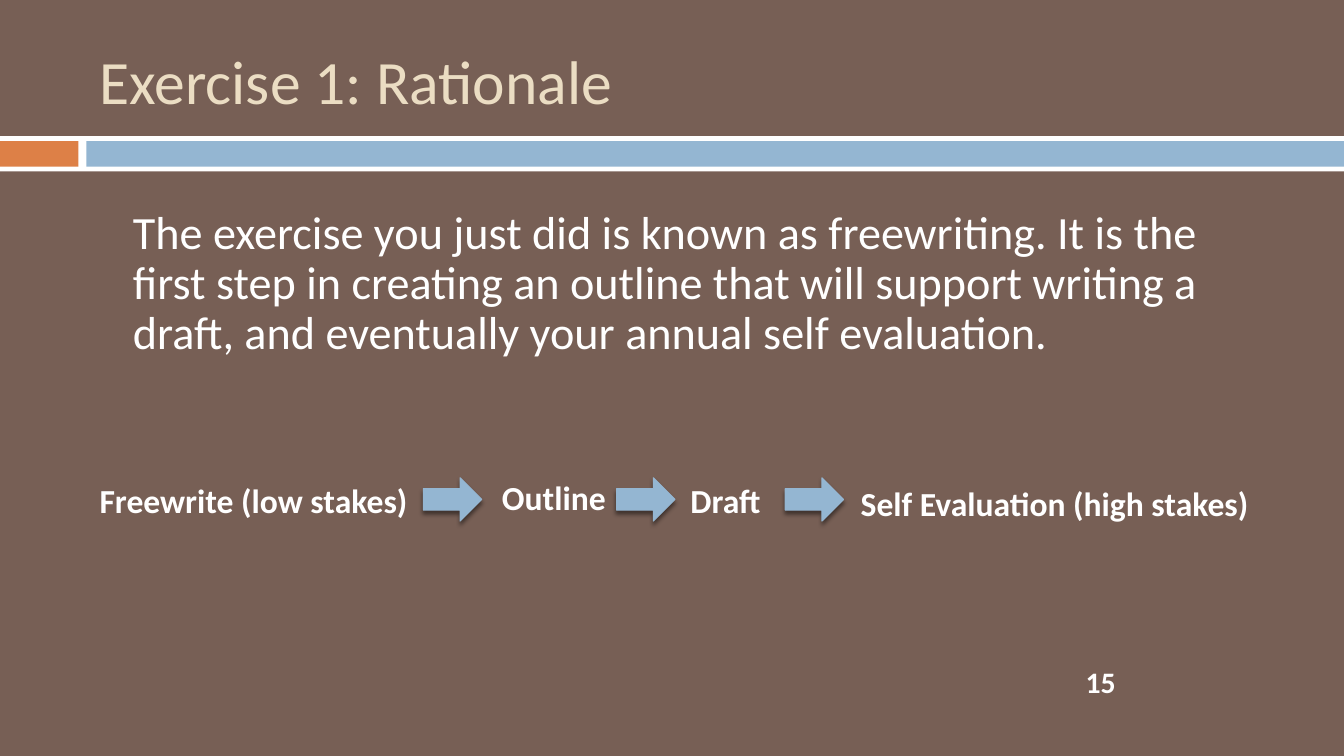
from lxml import etree
from pptx import Presentation
from pptx import util as u
from pptx.dml import color
from pptx.enum import shapes, text
from pptx.oxml import ns

COLORS = {"brown": "775F55", "white": "FFFFFF", "orange": "DD8047",
          "blue": "94B6D2", "cream": "EBDDC3", "black": "000000"}


def rgb(name):
    """Return the named colour."""
    return color.RGBColor.from_string(COLORS[name])


def add_block(s, kind, box, fill):
    """Add a filled shape without outline or shadow."""
    sp = s.shapes.add_shape(kind, *map(u.Cm, box))
    sp.shadow.inherit = False
    sp.fill.solid()
    sp.fill.fore_color.rgb = rgb(fill)
    sp.line.fill.background()
    return sp


def add_arrow(s, left):
    """Add a process arrow with a soft shadow below it."""
    sp = add_block(s, shapes.MSO_SHAPE.RIGHT_ARROW, (left, 12.04, 1.47, 1.09), "blue")
    sp.line.color.rgb = rgb("blue")
    sp.line.width = u.Pt(0.79)
    effects = sp._element.spPr.find(ns.qn("a:effectLst"))
    shadow = etree.SubElement(effects, ns.qn("a:outerShdw"), blurRad=str(u.Pt(3)),
                              dist=str(u.Pt(2.4)), dir="5400000", rotWithShape="0")
    tint = etree.SubElement(shadow, ns.qn("a:srgbClr"), val=COLORS["black"])
    etree.SubElement(tint, ns.qn("a:alpha"), val="45000")


def add_text(s, words, box, size=24, fill="white", bold=False, middle=False,
             align=text.PP_ALIGN.LEFT, spacing=1.0, before=0, after=0):
    """Add a wrapped text box holding one formatted paragraph."""
    tf = s.shapes.add_textbox(*map(u.Cm, box)).text_frame
    tf.word_wrap = True
    tf.vertical_anchor = text.MSO_ANCHOR.MIDDLE if middle else text.MSO_ANCHOR.TOP
    p = tf.paragraphs[0]
    p.alignment, p.line_spacing = align, spacing
    p.space_before, p.space_after = u.Pt(before), u.Pt(after)
    r = p.add_run()
    r.text = words
    r.font.name, r.font.size, r.font.bold = "Calibri", u.Pt(size), bold
    r.font.color.rgb = rgb(fill)


def main():
    """Build and save the slide."""
    prs = Presentation()
    prs.slide_width, prs.slide_height = u.Cm(33.87), u.Cm(19.05)
    s = prs.slides.add_slide(prs.slide_layouts[6])
    s.background.fill.solid()
    s.background.fill.fore_color.rgb = rgb("brown")

    for box, fill in (((0, 3.43, 33.87, 0.89), "white"),
                      ((0, 3.56, 1.98, 0.64), "orange"),
                      ((2.18, 3.56, 31.69, 0.64), "blue")):
        add_block(s, shapes.MSO_SHAPE.RECTANGLE, box, fill)

    add_text(s, "Exercise 1: Rationale", (2.26, 0.64, 30.2, 2.74),
             size=44, fill="cream", middle=True)
    add_text(s, "The exercise you just did is known as freewriting. It is the first step "
             "in creating an outline that will support writing a draft, and eventually "
             "your annual self evaluation.", (3.1, 5.16, 28.42, 11.99),
             size=33, spacing=0.9, before=7, after=5)

    for left in (10.67, 15.54, 19.79):
        add_arrow(s, left)
    for words, left, top, width in (("Freewrite (low stakes)", 2.26, 11.96, 9.12),
                                    ("Outline", 12.4, 11.89, 5.64),
                                    ("Draft", 17.15, 11.96, 5.64),
                                    ("Self Evaluation (high stakes)", 21.44, 12.04, 10.95)):
        add_text(s, words, (left, top, width, 1.27), bold=True)

    add_text(s, "15", (23.93, 16.76, 7.62, 1.02), size=21.2, bold=True, middle=True,
             align=text.PP_ALIGN.CENTER, spacing=0.8)
    prs.save("out.pptx")


if __name__ == "__main__":
    main()
